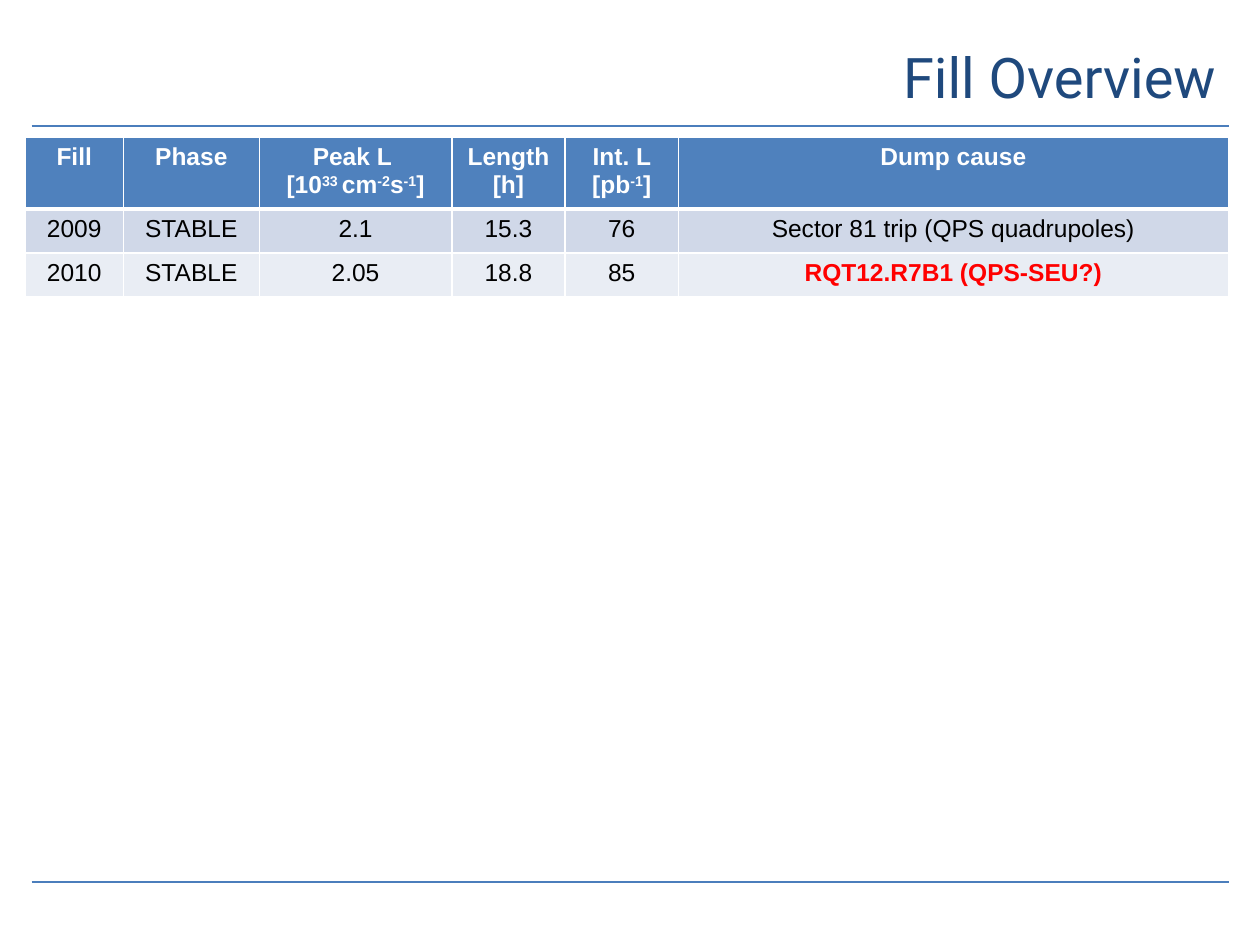
from lxml.etree import SubElement
from pptx import Presentation
from pptx.dml.color import RGBColor
from pptx.enum.shapes import MSO_CONNECTOR
from pptx.enum.text import MSO_ANCHOR, PP_ALIGN
from pptx.oxml.ns import qn
from pptx.util import Inches, Pt

COLUMNS = [0.78, 1.08, 1.53, 0.9, 0.9, 4.37]
ROWS = [0.49, 0.35, 0.35]
FILLS = ["4F81BD", "D0D8E8", "E9EDF4"]
FILL_TABLE = [
    ["Fill", "Phase", "Peak L \n[10^33 ^cm^-2^s^-1^]", "Length [h]",
     "Int. L [pb^-1^]", "Dump cause"],
    ["2009", "STABLE", "2.1", "15.3", "76", "Sector 81 trip (QPS quadrupoles)"],
    ["2010", "STABLE", "2.05", "18.8", "85", "RQT12.R7B1 (QPS-SEU?)"],
]


def rgb(value):
    return RGBColor.from_string(value)


def style(r, size, font, color, bold=False):
    r.font.size = Pt(size)
    r.font.name = font
    r.font.color.rgb = rgb(color)
    r.font.bold = bold


def add_rule(s, left, top, width):
    line = s.shapes.add_connector(MSO_CONNECTOR.STRAIGHT, Inches(left), Inches(top),
                                  Inches(left + width), Inches(top))
    line.line.color.rgb = rgb("4B7EBC")
    line.line.width = Pt(1.5)
    SubElement(line._element.spPr, qn("a:effectLst"))


def add_title(s, left, top, width, height):
    sp = s.shapes.add_textbox(Inches(left), Inches(top), Inches(width), Inches(height))
    tf = sp.text_frame
    tf.word_wrap = True
    tf.vertical_anchor = MSO_ANCHOR.MIDDLE
    tf.text = "Fill Overview"
    p = tf.paragraphs[0]
    p.alignment = PP_ALIGN.RIGHT
    style(p.runs[0], 32, "Roboto", "1F497D")


def set_borders(cell, bottom):
    tcPr = cell._tc.get_or_add_tcPr()
    for side, width in zip("LRTB", (1, 1, 1, bottom)):
        ln = SubElement(tcPr, qn(f"a:ln{side}"), w=str(Pt(width)))
        fill = SubElement(ln, qn("a:solidFill"))
        SubElement(fill, qn("a:srgbClr"), val="FFFFFF")


def write_cell(cell, text, color, bold):
    tf = cell.text_frame
    tf.text = text
    for p, line in zip(tf.paragraphs, text.split("\n")):
        p.text = ""
        p.alignment = PP_ALIGN.CENTER
        for i, part in enumerate(line.split("^")):
            r = p.add_run()
            r.text = part
            style(r, 14, "Arial", color, bold)
            if i % 2:
                r.font._element.set("baseline", "30000")


def add_fill_table(s, left, top, width, height):
    table = s.shapes.add_table(len(ROWS), len(COLUMNS), Inches(left), Inches(top),
                               Inches(width), Inches(height)).table
    for column, share in zip(table.columns, COLUMNS):
        column.width = Inches(width * share / sum(COLUMNS))
    for i, row in enumerate(table.rows):
        row.height = Inches(height * ROWS[i] / sum(ROWS))
        for j, cell in enumerate(row.cells):
            header, alert = i == 0, (i, j) == (2, 5)
            color = "FFFFFF" if header else "FF0000" if alert else "000000"
            write_cell(cell, FILL_TABLE[i][j], color, header or alert)
            set_borders(cell, 3 if header else 1)
            cell.fill.solid()
            cell.fill.fore_color.rgb = rgb(FILLS[i])


def main():
    prs = Presentation()
    prs.slide_width, prs.slide_height = Inches(10), Inches(7.5)
    s = prs.slides.add_slide(prs.slide_layouts[6])
    for top in (1, 7):
        add_rule(s, 0.25, top, 9.5)
    add_title(s, 1.75, 0.17, 8, 0.87)
    add_fill_table(s, 0.2, 1.09, 9.55, sum(ROWS))
    prs.save("out.pptx")


if __name__ == "__main__":
    main()
